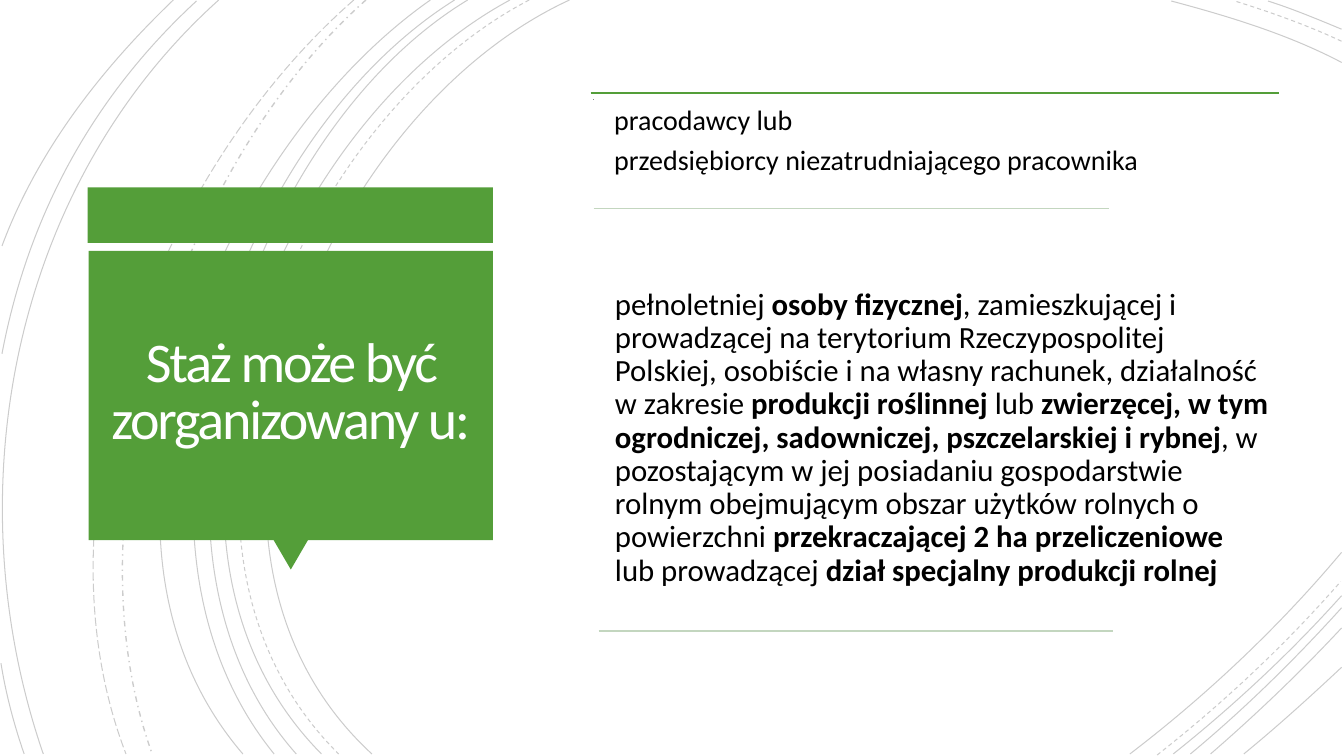
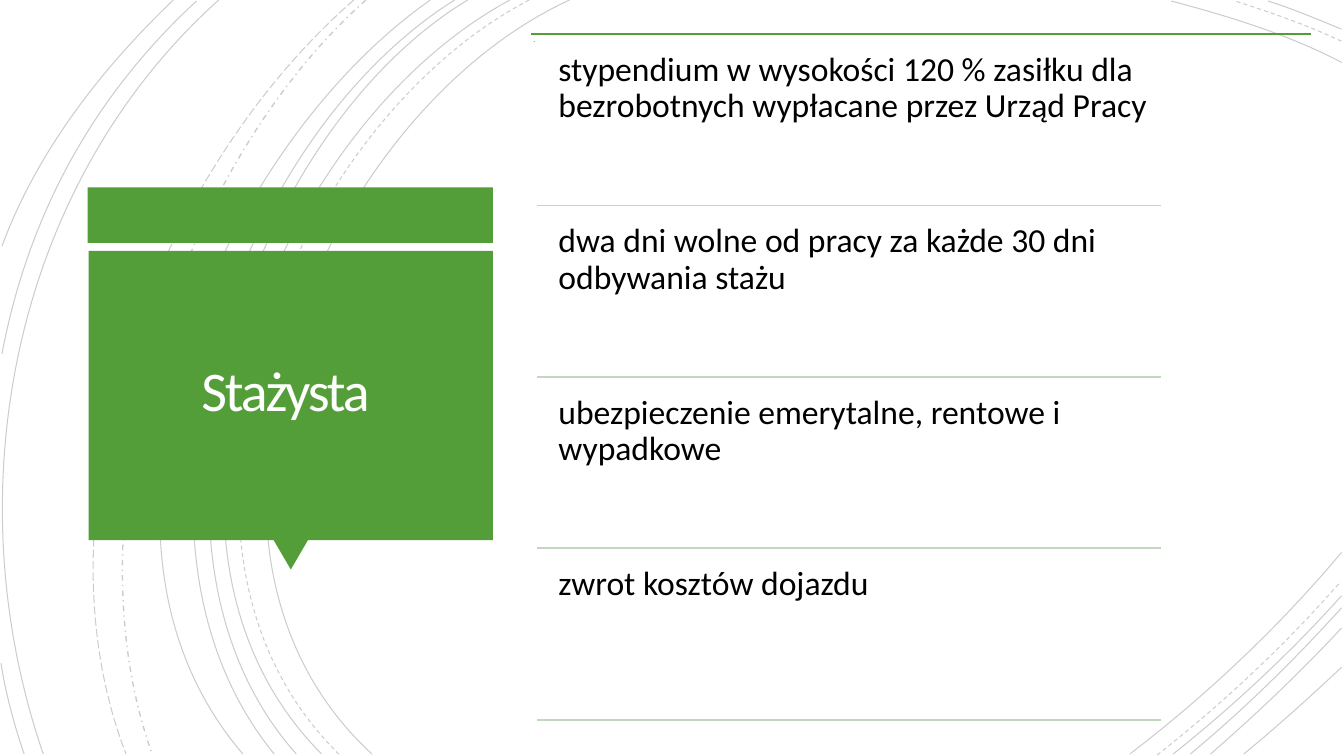
from dataclasses import dataclass
from typing import NamedTuple

from lxml.etree import SubElement
from pptx import Presentation
from pptx.dml.color import RGBColor
from pptx.enum.dml import MSO_LINE
from pptx.enum.shapes import MSO_CONNECTOR, MSO_SHAPE
from pptx.enum.text import MSO_ANCHOR, MSO_AUTO_SIZE, PP_ALIGN
from pptx.oxml.ns import qn
from pptx.shapes.autoshape import Shape
from pptx.slide import Slide, SlideLayout
from pptx.util import Inches, Pt

GREEN = RGBColor(0x54, 0x9E, 0x39)
PALE_GREEN = RGBColor(0xC3, 0xD6, 0xBF)
BLACK = RGBColor(0, 0, 0)
WHITE = RGBColor(0xFF, 0xFF, 0xFF)
BODY_FONT = "Calibri"
MARK_FONT = "Roboto Slab"
INSET_RATIO = 0.3
SPACE_AFTER_RATIO = 0.35

Point = tuple[float, float]


class Run(NamedTuple):
    text: str
    bold: bool = False


@dataclass
class Arc:
    """A cubic curve, in inches."""
    start: Point
    control1: Point
    control2: Point
    end: Point
    dash: MSO_LINE = MSO_LINE.SOLID
    weight: float = 0.75


@dataclass
class Rule:
    left: float
    right: float
    y: float
    color: RGBColor = PALE_GREEN


@dataclass
class TextBlock:
    left: float
    top: float
    width: float
    height: float
    size: float
    paragraphs: list[list[Run]]
    font: str = BODY_FONT


ARCS = [
    Arc((5.65, 0), (3.15, 1.15), (1.43, 5.4), (3.69, 7.48)),
    Arc((13.31, 0.62), (12.78, 0.34), (12.18, 0.16), (11.62, 0.01)),
    Arc((11.21, 7.48), (11.97, 6.9), (12.69, 6.22), (13.31, 5.48)),
    Arc((5.25, 0), (2.85, 1.25), (1.23, 5.37), (3.36, 7.48), MSO_LINE.DASH),
    Arc((13.31, 0.41), (12.97, 0.25), (12.6, 0.12), (12.25, 0.01), MSO_LINE.DASH),
    Arc((11.48, 7.49), (12.13, 6.98), (12.75, 6.4), (13.3, 5.77), MSO_LINE.DASH),
    Arc((5.06, 0), (2.7, 1.27), (1.1, 5.37), (3.19, 7.48)),
    Arc((13.31, 0.29), (13.07, 0.19), (12.83, 0.09), (12.58, 0.01)),
    Arc((11.64, 7.48), (12.23, 7.01), (12.8, 6.48), (13.31, 5.91)),
    Arc((4.64, 0), (2.44, 1.33), (1.1, 5.41), (2.94, 7.48)),
    Arc((11.81, 7.48), (12.34, 7.04), (12.84, 6.55), (13.31, 6.03)),
    Arc((4.51, 0), (2.31, 1.38), (0.97, 5.33), (2.72, 7.48)),
    Arc((12.01, 7.48), (12.46, 7.09), (12.9, 6.67), (13.31, 6.23)),
    Arc((4.27, 0), (2.17, 1.47), (0.53, 5.29), (2.41, 7.48)),
    Arc((12.34, 7.48), (12.67, 7.21), (12.99, 6.92), (13.31, 6.62)),
    Arc((3.63, 0), (1.76, 1.66), (0.65, 5.09), (1.51, 7.48), MSO_LINE.DASH_DOT, 1),
    Arc((3.51, 0), (1.57, 1.69), (0.29, 4.99), (1.25, 7.48), MSO_LINE.LONG_DASH),
    Arc((2.17, 0), (0.11, 1.85), (-0.46, 4.9), (0.43, 7.48)),
    Arc((1.95, 0.01), (0.92, 0.96), (0.28, 2.14), (0.02, 3.51)),
    Arc((0.01, 6.58), (0.06, 6.89), (0.14, 7.19), (0.24, 7.48)),
    Arc((1.72, 0), (1, 0.69), (0.37, 1.5), (0.02, 2.44)),
]

HOST_PARAGRAPHS = [
    [Run("pracodawcy lub")],
    [Run("przedsiębiorcy niezatrudniającego pracownika")],
]
FARMER_PARAGRAPH = [
    Run("pełnoletniej "),
    Run("osoby fizycznej", True),
    Run(", zamieszkującej i prowadzącej na terytorium Rzeczypospolitej Polskiej, "
        "osobiście i na własny rachunek, działalność w zakresie "),
    Run("produkcji roślinnej ", True),
    Run("lub "),
    Run("zwierzęcej, w tym ogrodniczej, sadowniczej, pszczelarskiej i rybnej", True),
    Run(", w pozostającym w jej posiadaniu gospodarstwie rolnym obejmującym obszar "
        "użytków rolnych o powierzchni "),
    Run("przekraczającej 2 ha przeliczeniowe ", True),
    Run("lub prowadzącej "),
    Run("dział specjalny produkcji rolnej", True),
]
BENEFITS = [
    "stypendium w wysokości 120 % zasiłku dla bezrobotnych wypłacane przez Urząd Pracy",
    "dwa dni wolne od pracy za każde 30 dni odbywania stażu",
    "ubezpieczenie emerytalne, rentowe i wypadkowe",
    "zwrot kosztów dojazdu",
]
BENEFIT_TOP, BENEFIT_PITCH, BENEFIT_HEIGHT = 0.42, 1.7, 1.62


def add_arc(slide: Slide, arc: Arc) -> Shape:
    """Outline the control points, then turn the three segments into one curve."""
    start, *others = [(Inches(x), Inches(y))
                      for x, y in (arc.start, arc.control1, arc.control2, arc.end)]
    builder = slide.shapes.build_freeform(*start)
    builder.add_line_segments(others, close=False)
    sp = builder.convert_to_shape()
    segments = list(sp.element.iter(qn("a:lnTo")))
    curve = SubElement(segments[0].getparent(), qn("a:cubicBezTo"))
    for segment in segments:
        curve.append(segment[0])
        segment.getparent().remove(segment)
    sp.shadow.inherit = False
    sp.fill.background()
    sp.line.color.rgb = BLACK
    sp.line.width = Pt(arc.weight)
    sp.line.dash_style = arc.dash
    color = sp.element.spPr.find(f"{qn('a:ln')}//{qn('a:srgbClr')}")
    SubElement(color, qn("a:alpha"), val="20000")
    return sp


def add_green_shape(slide: Slide, kind: MSO_SHAPE, left: float, top: float,
                    width: float, height: float) -> Shape:
    sp = slide.shapes.add_shape(kind, Inches(left), Inches(top), Inches(width), Inches(height))
    sp.shadow.inherit = False
    sp.fill.solid()
    sp.fill.fore_color.rgb = GREEN
    sp.line.fill.background()
    return sp


def move_backdrop_to_layout(slide: Slide, layout: SlideLayout) -> None:
    """Draw the shared curves and title panel, then hand them to the layout."""
    shapes = [add_arc(slide, arc) for arc in ARCS]
    shapes.append(add_green_shape(slide, MSO_SHAPE.RECTANGLE, 0.87, 1.86, 4.02, 0.55))
    pointer = add_green_shape(slide, MSO_SHAPE.ISOSCELES_TRIANGLE, 2.71, 5.35, 0.35, 0.3)
    pointer.rotation = 180
    shapes.append(pointer)
    shapes.append(add_green_shape(slide, MSO_SHAPE.RECTANGLE, 0.88, 2.49, 4.01, 2.87))
    for shape_id, sp in enumerate(shapes, start=100):
        sp.element.find(f".//{qn('p:cNvPr')}").set("id", str(shape_id))
        layout.shapes.element.append(sp.element)


def set_title(slide: Slide, text: str) -> None:
    title = slide.shapes.title
    title.left, title.top = Inches(0.97), Inches(2.56)
    title.width, title.height = Inches(3.83), Inches(2.7)
    tf = title.text_frame
    tf.text = text
    tf.word_wrap = True
    tf.auto_size = MSO_AUTO_SIZE.NONE
    tf.vertical_anchor = MSO_ANCHOR.MIDDLE
    tf.margin_left = tf.margin_right = tf.margin_top = tf.margin_bottom = Inches(0.1)
    p = tf.paragraphs[0]
    p.alignment = PP_ALIGN.CENTER
    p.line_spacing = 0.85
    r = p.runs[0]
    r.font.name, r.font.size = BODY_FONT, Pt(40)
    r.font.color.rgb = WHITE
    p._p.find(f".//{qn('a:rPr')}").set("spc", "-150")


def add_rule(slide: Slide, rule: Rule) -> None:
    line = slide.shapes.add_connector(MSO_CONNECTOR.STRAIGHT, Inches(rule.left), Inches(rule.y),
                                      Inches(rule.right), Inches(rule.y))
    line.line.color.rgb = rule.color
    line.line.width = Pt(1.25)
    SubElement(line.element.spPr, qn("a:effectLst"))


def add_text(slide: Slide, block: TextBlock) -> None:
    box = slide.shapes.add_textbox(Inches(block.left), Inches(block.top),
                                   Inches(block.width), Inches(block.height))
    tf = box.text_frame
    tf.word_wrap = True
    inset = Pt(block.size * INSET_RATIO)
    tf.margin_left = tf.margin_right = tf.margin_top = tf.margin_bottom = inset
    for i, runs in enumerate(block.paragraphs):
        p = tf.add_paragraph() if i else tf.paragraphs[0]
        p.line_spacing = 0.9
        p.space_after = Pt(block.size * SPACE_AFTER_RATIO)
        for text, bold in runs:
            r = p.add_run()
            r.text = text
            r.font.name, r.font.size, r.font.bold = block.font, Pt(block.size), bold
            r.font.color.rgb = BLACK


def add_list_head(slide: Slide, left: float, right: float, top: float,
                  width: float, height: float) -> None:
    """Green top rule with the narrow column that holds a small dot."""
    add_rule(slide, Rule(left, right, top, GREEN))
    add_text(slide, TextBlock(left, top, width, height, 5, [[Run(".")]], MARK_FONT))


def fill_hosts_slide(slide: Slide) -> None:
    set_title(slide, "Staż może być zorganizowany u:")
    add_list_head(slide, 5.86, 12.69, 0.92, 0.05, 5.39)
    add_text(slide, TextBlock(6.01, 0.97, 6.53, 1.75, 20, HOST_PARAGRAPHS))
    add_rule(slide, Rule(5.89, 11, 2.07))
    add_text(slide, TextBlock(6.01, 2.77, 6.67, 3.55, 22, [FARMER_PARAGRAPH]))
    add_rule(slide, Rule(5.94, 11.04, 6.26))


def fill_trainee_slide(slide: Slide) -> None:
    set_title(slide, "Stażysta ")
    add_list_head(slide, 5.27, 13.01, 0.34, 0.06, 6.89)
    for i, benefit in enumerate(BENEFITS):
        top = BENEFIT_TOP + i * BENEFIT_PITCH
        add_text(slide, TextBlock(5.44, top, 6.07, BENEFIT_HEIGHT, 24, [[Run(benefit)]]))
        add_rule(slide, Rule(5.33, 11.52, top + BENEFIT_HEIGHT))


def main() -> None:
    prs = Presentation()
    prs.slide_width, prs.slide_height = Inches(40) // 3, Inches(7.5)
    layout = prs.slide_layouts[5]
    hosts, trainee = (prs.slides.add_slide(layout) for _ in range(2))
    move_backdrop_to_layout(hosts, layout)
    fill_hosts_slide(hosts)
    fill_trainee_slide(trainee)
    prs.save("out.pptx")


if __name__ == "__main__":
    main()
